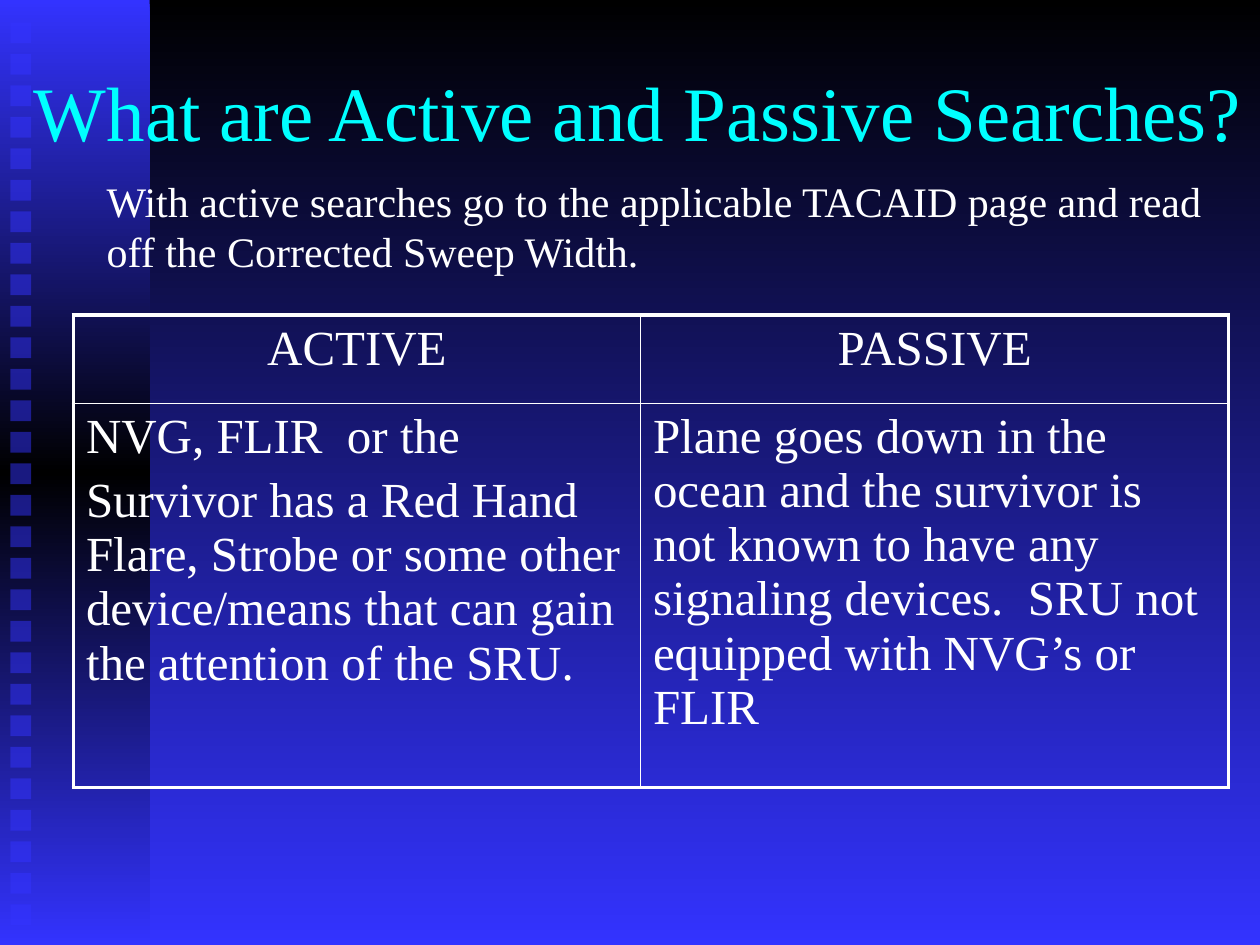
from copy import deepcopy
from dataclasses import dataclass

from lxml import etree
from pptx import Presentation
from pptx import util as u
from pptx.dml.color import RGBColor
from pptx.enum import shapes, text
from pptx.oxml.ns import qn

COLOURS = {"night": "000000", "blue": "3333FF", "title": "00FFFF", "white": "FFFFFF"}
FONT = "Times New Roman"
SQUARE_COUNT = 29
SQUARE_PITCH = u.Cm(2.54) // 4
OUTER_LINE, INNER_LINE = u.Pt(2.25), u.Pt(1)


@dataclass
class Box:
    left: float
    top: float
    width: float
    height: float

    def lengths(self) -> tuple:
        return tuple(u.Cm(n) for n in (self.left, self.top, self.width, self.height))


@dataclass
class SearchType:
    heading: str
    examples: list[str]
    width: float


SEARCH_TYPES = [
    SearchType("ACTIVE", [
        "NVG, FLIR  or the",
        "Survivor has a Red Hand Flare, Strobe or some other device/means "
        "that can gain the attention of the SRU.",
    ], 11.43),
    SearchType("PASSIVE", [
        "Plane goes down in the ocean and the survivor is not known to have any "
        "signaling devices.  SRU not equipped with NVG’s or FLIR",
    ], 11.86),
]
ROW_HEIGHTS = [1.78, 7.75]


def rgb(name: str) -> RGBColor:
    return RGBColor.from_string(COLOURS[name])


def write(frame, paragraphs: list[str], *, size: float, colour: str = "white",
          align=text.PP_ALIGN.LEFT, anchor=text.MSO_ANCHOR.MIDDLE, before: float = 0) -> None:
    frame.word_wrap = True
    frame.auto_size = text.MSO_AUTO_SIZE.NONE
    frame.vertical_anchor = anchor
    for i, words in enumerate(paragraphs):
        paragraph = frame.add_paragraph() if i else frame.paragraphs[0]
        paragraph.alignment = align
        paragraph.space_before = u.Pt(before)
        run = paragraph.add_run()
        run.text = words
        run.font.name = FONT
        run.font.size = u.Pt(size)
        run.font.color.rgb = rgb(colour)


def fill_downwards(fill, owner, colours: list[str]) -> None:
    """Give evenly spaced gradient stops from top to bottom."""
    fill.gradient()
    fill.gradient_angle = 270
    stop_list = next(owner.iter(qn("a:gsLst")))
    while len(stop_list) < len(colours):
        stop_list.append(deepcopy(stop_list[0]))
    for i, (stop, colour) in enumerate(zip(fill.gradient_stops, colours)):
        stop.position = i / (len(colours) - 1)
        stop.color.rgb = rgb(colour)


def add_rectangle(parent, left: int, top: int, width: int, height: int):
    rectangle = parent.shapes.add_shape(shapes.MSO_SHAPE.RECTANGLE, left, top, width, height)
    rectangle.shadow.inherit = False
    rectangle.line.fill.background()
    return rectangle


def add_side_band(slide, height: int) -> None:
    group = slide.shapes.add_group_shape()
    band = add_rectangle(group, 0, 0, u.Cm(3.02), height)
    fill_downwards(band.fill, band.element, ["blue", "night", "blue"])
    side = u.Cm(0.42)
    for i in range(SQUARE_COUNT):
        square = add_rectangle(group, u.Cm(0.21), u.Cm(0.45) + i * SQUARE_PITCH, side, side)
        square.fill.solid()
        square.fill.fore_color.rgb = rgb("blue")
        colour = next(square.element.spPr.iter(qn("a:srgbClr")))
        etree.SubElement(colour, qn("a:alpha"), val="50000")


def set_borders(cell, widths: dict[str, int]) -> None:
    properties = cell._tc.get_or_add_tcPr()
    for i, (edge, width) in enumerate(widths.items()):
        line = etree.Element(qn(f"a:ln{edge}"), w=str(int(width)))
        solid = etree.SubElement(line, qn("a:solidFill"))
        etree.SubElement(solid, qn("a:srgbClr"), val=COLOURS["white"])
        properties.insert(i, line)


def add_search_table(slide, box: Box) -> None:
    rows, columns = len(ROW_HEIGHTS), len(SEARCH_TYPES)
    table = slide.shapes.add_table(rows, columns, *box.lengths()).table
    table.first_row = table.horz_banding = False
    for row, height in zip(table.rows, ROW_HEIGHTS):
        row.height = u.Cm(height)
    for c, search in enumerate(SEARCH_TYPES):
        table.columns[c].width = u.Cm(search.width)
        for r, paragraphs in enumerate([[search.heading], search.examples]):
            cell = table.cell(r, c)
            cell.fill.background()
            outer = {"L": c == 0, "R": c == columns - 1, "T": r == 0, "B": r == rows - 1}
            set_borders(cell, {edge: OUTER_LINE if is_outer else INNER_LINE
                               for edge, is_outer in outer.items()})
            align = text.PP_ALIGN.LEFT if r else text.PP_ALIGN.CENTER
            write(cell.text_frame, paragraphs, size=28, align=align,
                  anchor=text.MSO_ANCHOR.TOP, before=5.6)


def main() -> None:
    deck = Presentation()
    deck.slide_width, deck.slide_height = u.Cm(25.4), u.Cm(19.05)
    slide = deck.slides.add_slide(deck.slide_layouts[5])
    fill_downwards(slide.background.fill, slide.element, ["night", "blue"])
    add_side_band(slide, deck.slide_height)

    title = slide.shapes.title
    title.left, title.top, title.width, title.height = Box(0.43, 0.64, 24.97, 3.18).lengths()
    write(title.text_frame, ["What are Active and Passive Searches?"], size=44, colour="title")
    title.element.getparent().append(title.element)  # in front of the side band

    add_search_table(slide, Box(1.48, 6.35, 23.29, 9.53))
    advice = slide.shapes.add_textbox(*Box(1.9, 2.96, 22.86, 3.18).lengths())
    write(advice.text_frame, ["With active searches go to the applicable TACAID page and read "
                              "off the Corrected Sweep Width."], size=24)
    deck.save("out.pptx")


if __name__ == "__main__":
    main()
